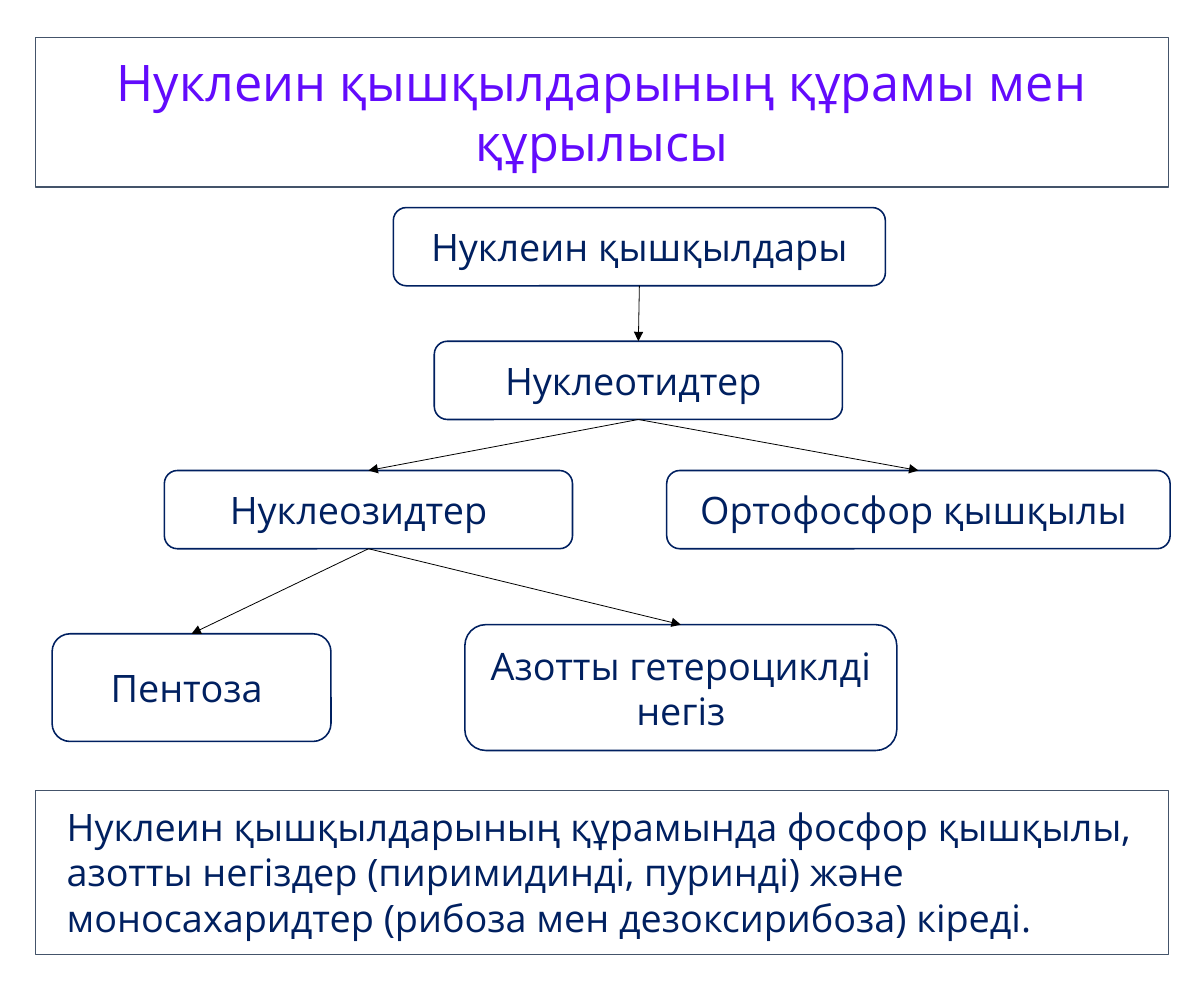
import dataclasses

import pptx
import pptx.dml.color
import pptx.enum.shapes
import pptx.enum.text
import pptx.oxml.ns
import pptx.util
from lxml import etree

Pt = pptx.util.Pt
RGB = pptx.dml.color.RGBColor
Align = pptx.enum.text.PP_ALIGN
Anchor = pptx.enum.text.MSO_ANCHOR
qn = pptx.oxml.ns.qn


@dataclasses.dataclass(frozen=True)
class Theme:
    font: str = "Open Sans"
    title_size: float = 32
    text_size: float = 24
    title: RGB = RGB(0x62, 0x0B, 0xFC)
    navy: RGB = RGB(0x00, 0x20, 0x60)
    frame: RGB = RGB(0x44, 0x54, 0x6A)
    white: RGB = RGB(0xFF, 0xFF, 0xFF)
    black: RGB = RGB(0x00, 0x00, 0x00)


@dataclasses.dataclass(frozen=True)
class Node:
    key: str
    text: str
    x: float
    y: float
    w: float
    h: float = 49.7
    extra_right: float = 0  # moves the centred label to the left


THEME = Theme()
INSET = 7.2
FRAME_X, FRAME_W = 22.3, 720

NODES = [
    Node("acids", "Нуклеин қышқылдары", 249.8, 131.8, 312.5),
    Node("nucleotides", "Нуклеотидтер", 275.8, 216.7, 259.2, extra_right=6.2),
    Node("nucleosides", "Нуклеозидтер", 104.4, 298.8, 259.2, extra_right=12.4),
    Node("phosphoric", "Ортофосфор қышқылы", 423.4, 298.8, 319.7, extra_right=6.2),
    Node("pentose", "Пентоза", 33.1, 402.5, 177.1, 68.4, extra_right=6.2),
    Node("base", "Азотты гетероциклді негіз", 295.2, 396.7, 274.3, 79.9),
]

LINKS = [
    ("acids", "nucleotides"),
    ("nucleotides", "nucleosides"),
    ("nucleotides", "phosphoric"),
    ("nucleosides", "pentose"),
    ("nucleosides", "base"),
]


def write(tf, text: str, size: float, color: RGB, align: Align) -> None:
    tf.word_wrap = True
    p = tf.paragraphs[0]
    p.alignment = align
    p.space_before = Pt(0)
    r = p.add_run()
    r.text = text
    r.font.name = THEME.font
    r.font.size = Pt(size)
    r.font.color.rgb = color


def format_frame(sp, y: float, h: float, text: str, size: float,
                 color: RGB, align: Align) -> None:
    sp.left, sp.top, sp.width, sp.height = Pt(FRAME_X), Pt(y), Pt(FRAME_W), Pt(h)
    sp.line.color.rgb = THEME.frame
    sp.line.width = Pt(0.75)
    tf = sp.text_frame
    tf.auto_size = pptx.enum.text.MSO_AUTO_SIZE.NONE
    tf.vertical_anchor = Anchor.TOP
    tf.margin_left = tf.margin_right = Pt(20)
    tf.margin_top = tf.margin_bottom = Pt(8.6)
    write(tf, text, size, color, align)


def remove_bullet(p) -> None:
    pPr = p._p.get_or_add_pPr()
    pPr.set("marL", "0")
    pPr.set("indent", "0")
    etree.SubElement(pPr, qn("a:buNone"))


def add_node(s, node: Node):
    sp = s.shapes.add_shape(pptx.enum.shapes.MSO_SHAPE.ROUNDED_RECTANGLE,
                            Pt(node.x), Pt(node.y), Pt(node.w), Pt(node.h))
    sp.shadow.inherit = False
    sp.fill.solid()
    sp.fill.fore_color.rgb = THEME.white
    sp.line.color.rgb = THEME.navy
    sp.line.width = Pt(1)
    tf = sp.text_frame
    tf.vertical_anchor = Anchor.MIDDLE
    tf.margin_right = Pt(INSET + node.extra_right)
    write(tf, node.text, THEME.text_size, THEME.navy, Align.CENTER)
    return sp


def add_arrow(s, parent, child) -> None:
    c = s.shapes.add_connector(pptx.enum.shapes.MSO_CONNECTOR.STRAIGHT, 0, 0, 0, 0)
    c.begin_connect(parent, 2)
    c.end_connect(child, 0)
    c.line.color.rgb = THEME.black
    c.line.width = Pt(0.5)
    etree.SubElement(c.line._get_or_add_ln(), qn("a:tailEnd"), type="triangle")
    etree.SubElement(c._element.spPr, qn("a:effectLst"))


def main() -> None:
    prs = pptx.Presentation()
    prs.slide_width, prs.slide_height = Pt(764.6), Pt(630)
    s = prs.slides.add_slide(prs.slide_layouts[1])

    # Title and summary
    format_frame(s.shapes.title, 23.8, 95,
                 "Нуклеин қышқылдарының құрамы мен құрылысы",
                 THEME.title_size, THEME.title, Align.CENTER)
    body = s.placeholders[1]
    format_frame(body, 501.8, 104.4,
                 "Нуклеин қышқылдарының құрамында фосфор қышқылы, "
                 "азотты негіздер (пиримидинді, пуринді) және "
                 "моносахаридтер (рибоза мен дезоксирибоза) кіреді.",
                 THEME.text_size, THEME.navy, Align.LEFT)
    remove_bullet(body.text_frame.paragraphs[0])

    # Composition tree
    shapes = {node.key: add_node(s, node) for node in NODES}
    for parent, child in LINKS:
        add_arrow(s, shapes[parent], shapes[child])

    prs.save("out.pptx")


if __name__ == "__main__":
    main()
